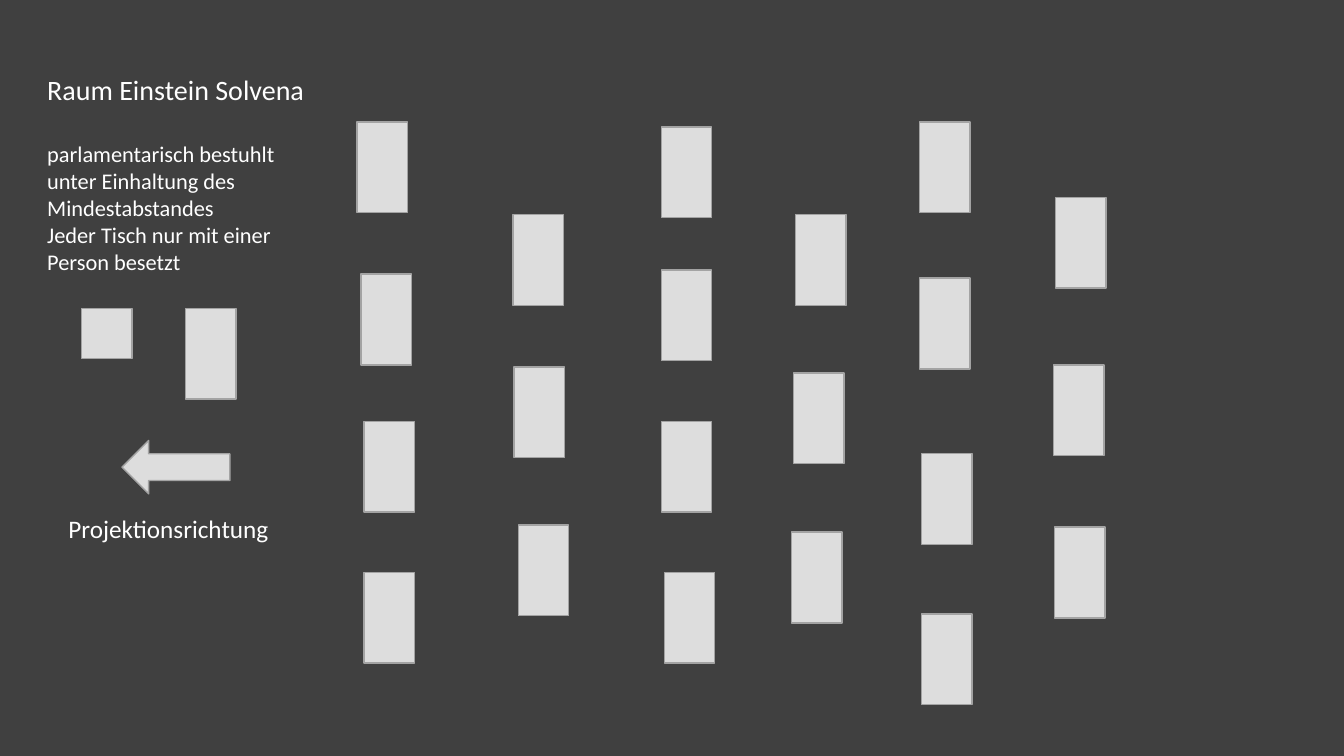
from pptx import Presentation
from pptx.dml.color import RGBColor
from pptx.enum.shapes import MSO_SHAPE
from pptx.util import Inches, Pt

RECTANGLE = MSO_SHAPE.RECTANGLE
LEFT_ARROW = MSO_SHAPE.LEFT_ARROW

COLORS = {"background": "404040", "fill": "DDDDDD", "line": "A3A3A3", "text": "FFFFFF"}
FONT = "Calibri"
TABLE_SIZE = (0.5, 0.9)

# Seating rows from the projection side to the back: (left, top) of each table
SEATING_ROWS = [
    [(3.54, 1.21), (3.58, 2.72), (3.61, 4.18), (3.61, 5.68)],
    [(5.09, 2.13), (5.1, 3.64), (5.14, 5.21)],
    [(6.56, 1.26), (6.56, 2.68), (6.56, 4.18), (6.59, 5.68)],
    [(7.89, 2.13), (7.87, 3.7), (7.85, 5.28)],
    [(9.12, 1.21), (9.12, 2.76), (9.14, 4.5), (9.14, 6.09)],
    [(10.47, 1.96), (10.45, 3.62), (10.46, 5.23)],
]
SPEAKER_TABLE = (1.84, 3.06)
SPEAKER_SEAT = (0.81, 3.06, 0.5, 0.5)
PROJECTION_ARROW = (1.21, 4.37, 1.07, 0.53)

# Paragraphs: (wording, size, space before), in points
ROOM_BOX = (0.37, 0.67, 2.93, 2.12)
ROOM_TEXT = [
    ("Raum Einstein Solvena", 20, 0),
    ("parlamentarisch bestuhlt unter Einhaltung des Mindestabstandes", 16, 24.4),
    ("Jeder Tisch nur mit einer Person besetzt", 16, 0),
]
PROJECTION_BOX = (0.58, 5.04, 2.31, 0.4)
PROJECTION_TEXT = [("Projektionsrichtung", 18, 0)]


def color(role):
    return RGBColor.from_string(COLORS[role])


def add_furniture(slide, kind, box):
    item = slide.shapes.add_shape(kind, *map(Inches, box))
    item.shadow.inherit = False
    item.fill.solid()
    item.fill.fore_color.rgb = color("fill")
    item.line.color.rgb = color("line")
    item.line.width = Pt(1)


def add_text(slide, box, paragraphs):
    frame = slide.shapes.add_textbox(*map(Inches, box)).text_frame
    frame.word_wrap = True
    for index, (wording, size, space_before) in enumerate(paragraphs):
        paragraph = frame.add_paragraph() if index else frame.paragraphs[0]
        paragraph.text = wording
        paragraph.space_before = Pt(space_before)
        paragraph.font.name = FONT
        paragraph.font.size = Pt(size)
        paragraph.font.color.rgb = color("text")


def main():
    presentation = Presentation()
    presentation.slide_width = Inches(13.33)
    presentation.slide_height = Inches(7.5)
    slide = presentation.slides.add_slide(presentation.slide_layouts[6])
    slide.background.fill.solid()
    slide.background.fill.fore_color.rgb = color("background")

    for row in SEATING_ROWS + [[SPEAKER_TABLE]]:
        for position in row:
            add_furniture(slide, RECTANGLE, position + TABLE_SIZE)
    add_furniture(slide, RECTANGLE, SPEAKER_SEAT)
    add_furniture(slide, LEFT_ARROW, PROJECTION_ARROW)

    add_text(slide, ROOM_BOX, ROOM_TEXT)
    add_text(slide, PROJECTION_BOX, PROJECTION_TEXT)
    presentation.save("out.pptx")


if __name__ == "__main__":
    main()
